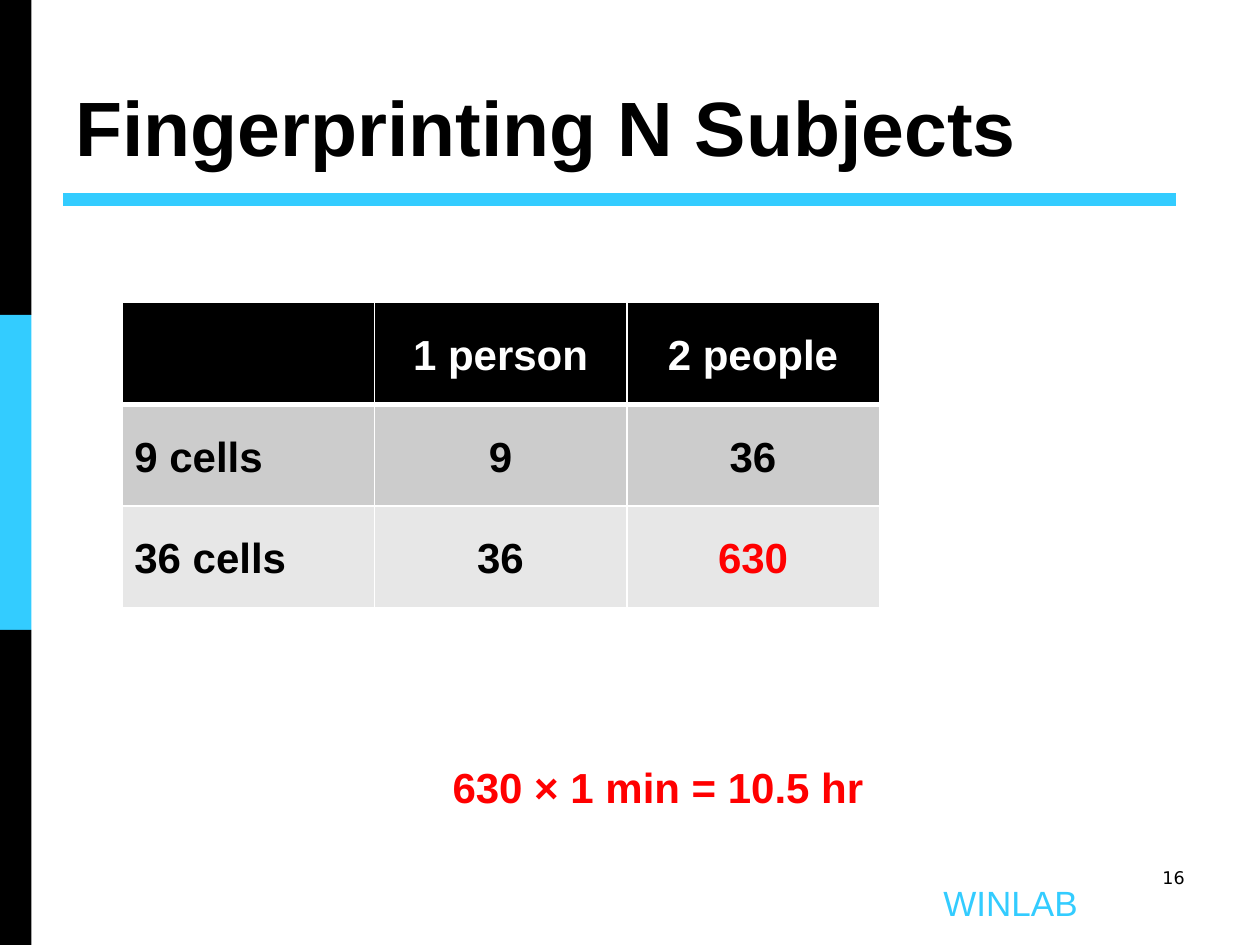
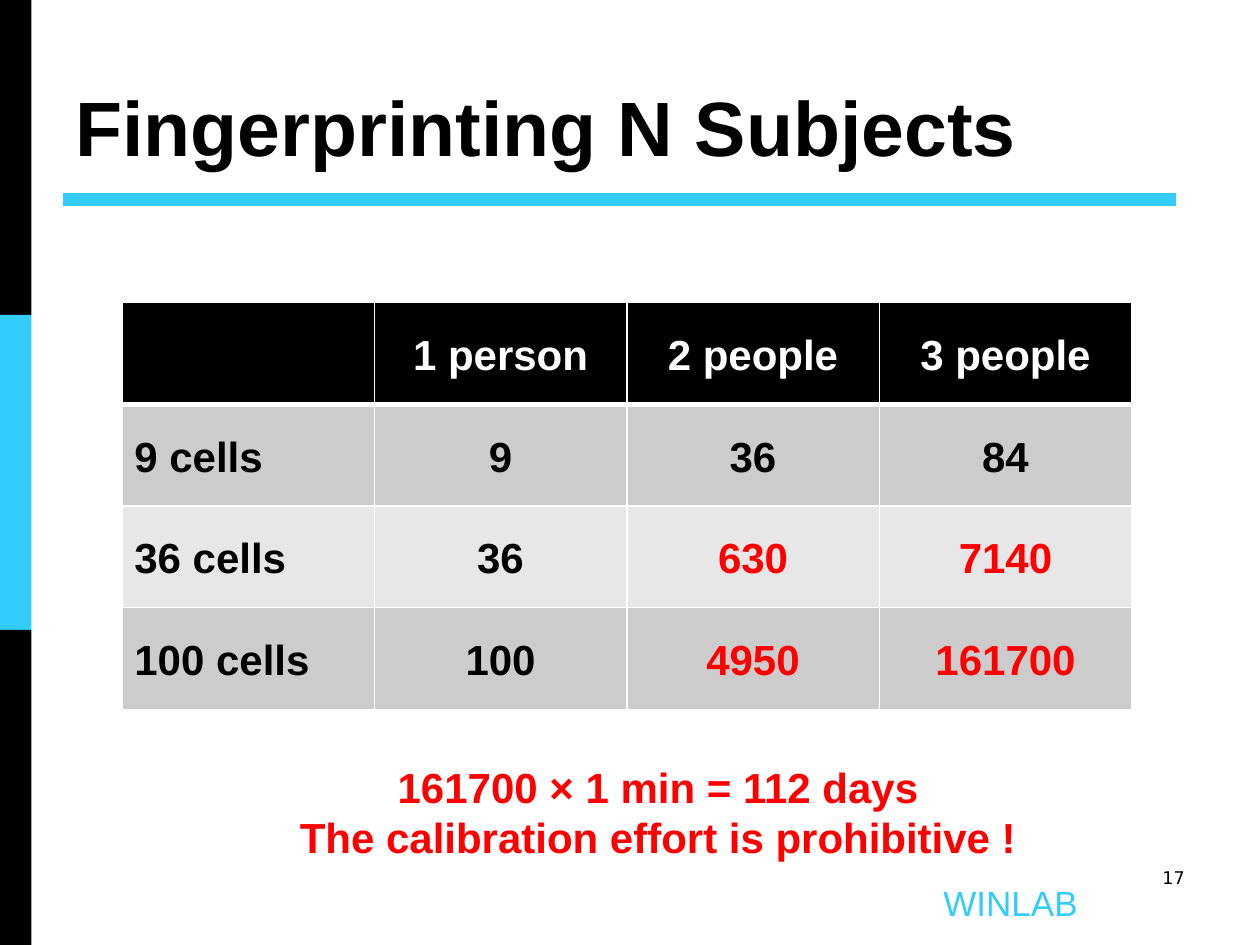
from lxml import etree
from pptx import Presentation, util as u
from pptx.dml.color import RGBColor
from pptx.enum import shapes, text
from pptx.oxml import ns

# Content
TITLE = "Fingerprinting N Subjects"
FOOTER = "WINLAB"
PAGES = [
    {
        "number": 16,
        "header": ["", "1 person", "2 people"],
        "rows": [("9 cells", 9, 36), ("36 cells", 36, 630)],
        "remarks": ["630 × 1 min = 10.5 hr"],
    },
    {
        "number": 17,
        "header": ["", "1 person", "2 people", "3 people"],
        "rows": [
            ("9 cells", 9, 36, 84),
            ("36 cells", 36, 630, 7140),
            ("100 cells", 100, 4950, 161700),
        ],
        "remarks": [
            "161700 × 1 min = 112 days",
            "The calibration effort is prohibitive !",
        ],
    },
]
COSTLY = 100  # cell counts above this are shown in red

# Look
BLACK = RGBColor(0x00, 0x00, 0x00)
WHITE = RGBColor(0xFF, 0xFF, 0xFF)
SKY = RGBColor(0x33, 0xCC, 0xFF)
RED = RGBColor(0xFF, 0x00, 0x00)
BANDS = [RGBColor(0xCC, 0xCC, 0xCC), RGBColor(0xE7, 0xE7, 0xE7)]
SANS = "Arial"
TITLE_FONT = {"name": SANS, "size": u.Pt(44), "bold": True}
BODY_FONT = {"name": SANS, "size": u.Pt(24), "bold": True}
FOOTER_FONT = {"name": SANS, "size": u.Pt(20), "bold": False}
NUMBER_FONT = {"name": "DejaVu Sans", "size": u.Pt(10), "bold": False}
LEFT, CENTER, RIGHT = (
    text.PP_ALIGN.LEFT, text.PP_ALIGN.CENTER, text.PP_ALIGN.RIGHT)

# Geometry in points
WIDTH, HEIGHT = 720, 540
STRIPE_WIDTH, STRIPE_HEIGHT = 18, HEIGHT / 3
TITLE_AREA = (36, 12, 648, 90)
RULE_LEFT, RULE_RIGHT, RULE_TOP = 36, 672, 114
FOOTER_AREA = (529, 500, 97, 31)
NUMBER_AREA = (516, 492, 168, 36)
TABLE_LEFT, TABLE_TOP = 69.6, 173
COLUMN_WIDTH, ROW_HEIGHT = 144.3, 58.1
REMARK_LEFT, REMARK_TOP, REMARK_WIDTH, REMARK_LINE = 137, 431.5, 478, 29


def points(area):
    return [u.Pt(value) for value in area]


def write(para, words, font, color, align):
    para.alignment = align
    span = para.add_run()
    span.text = words
    for name, value in font.items():
        setattr(span.font, name, value)
    span.font.color.rgb = color


def add_text(page, area, lines, font, color, align):
    frame = page.shapes.add_textbox(*points(area)).text_frame
    frame.word_wrap = True
    for index, line in enumerate(lines):
        para = frame.add_paragraph() if index else frame.paragraphs[0]
        write(para, line, font, color, align)


def add_frame(page, number):
    """Side stripes, title with its rule, footer and page number."""
    for index, color in enumerate([BLACK, SKY, BLACK]):
        area = (0, index * STRIPE_HEIGHT, STRIPE_WIDTH, STRIPE_HEIGHT)
        stripe = page.shapes.add_shape(
            shapes.MSO_SHAPE.RECTANGLE, *points(area))
        stripe.shadow.inherit = False
        stripe.fill.solid()
        stripe.fill.fore_color.rgb = color
        stripe.line.fill.background()

    rule = page.shapes.add_connector(
        shapes.MSO_CONNECTOR.STRAIGHT,
        *points((RULE_LEFT, RULE_TOP, RULE_RIGHT, RULE_TOP)))
    rule.line.color.rgb = SKY
    rule.line.width = u.Pt(7)
    etree.SubElement(rule.element.spPr, ns.qn("a:effectLst"))

    title = page.shapes.title
    title.left, title.top, title.width, title.height = points(TITLE_AREA)
    frame = title.text_frame
    frame.auto_size = text.MSO_AUTO_SIZE.NONE
    frame.vertical_anchor = text.MSO_ANCHOR.BOTTOM
    write(frame.paragraphs[0], TITLE, TITLE_FONT, BLACK, LEFT)

    add_text(page, FOOTER_AREA, [FOOTER], FOOTER_FONT, SKY, CENTER)
    add_text(page, NUMBER_AREA, [str(number)], NUMBER_FONT, BLACK, RIGHT)


def set_borders(cell, widths):
    properties = cell._tc.get_or_add_tcPr()
    for side, width in zip("LRTB", widths):
        line = etree.SubElement(
            properties, ns.qn(f"a:ln{side}"), w=str(u.Pt(width)))
        fill = etree.SubElement(line, ns.qn("a:solidFill"))
        etree.SubElement(fill, ns.qn("a:srgbClr"), val=str(WHITE))


def add_counts(page, header, rows):
    grid = [header, *rows]
    area = (TABLE_LEFT, TABLE_TOP,
            COLUMN_WIDTH * len(header), ROW_HEIGHT * len(grid))
    table = page.shapes.add_table(
        len(grid), len(header), *points(area)).table
    table.first_row = table.horz_banding = False
    for column in table.columns:
        column.width = u.Pt(COLUMN_WIDTH)
    for r, values in enumerate(grid):
        table.rows[r].height = u.Pt(ROW_HEIGHT)
        for c, value in enumerate(values):
            cell = table.cell(r, c)
            # A thick line parts the header from the body
            set_borders(cell, (1, 1, 3 if r == 1 else 1, 3 if r == 0 else 1))
            cell.fill.solid()
            cell.fill.fore_color.rgb = BANDS[(r - 1) % 2] if r else BLACK
            if value == "":
                continue
            costly = isinstance(value, int) and value > COSTLY
            color = WHITE if r == 0 else RED if costly else BLACK
            para = cell.text_frame.paragraphs[0]
            para.line_spacing = 1.5
            write(para, str(value), BODY_FONT, color, CENTER if c else LEFT)


def main():
    deck = Presentation()
    deck.slide_width, deck.slide_height = u.Pt(WIDTH), u.Pt(HEIGHT)
    title_only = deck.slide_layouts[5]
    for content in PAGES:
        page = deck.slides.add_slide(title_only)
        add_frame(page, content["number"])
        add_counts(page, content["header"], content["rows"])
        remarks = content["remarks"]
        area = (REMARK_LEFT, REMARK_TOP,
                REMARK_WIDTH, 7.2 + REMARK_LINE * len(remarks))
        add_text(page, area, remarks, BODY_FONT, RED, CENTER)
    deck.save("out.pptx")


if __name__ == "__main__":
    main()
